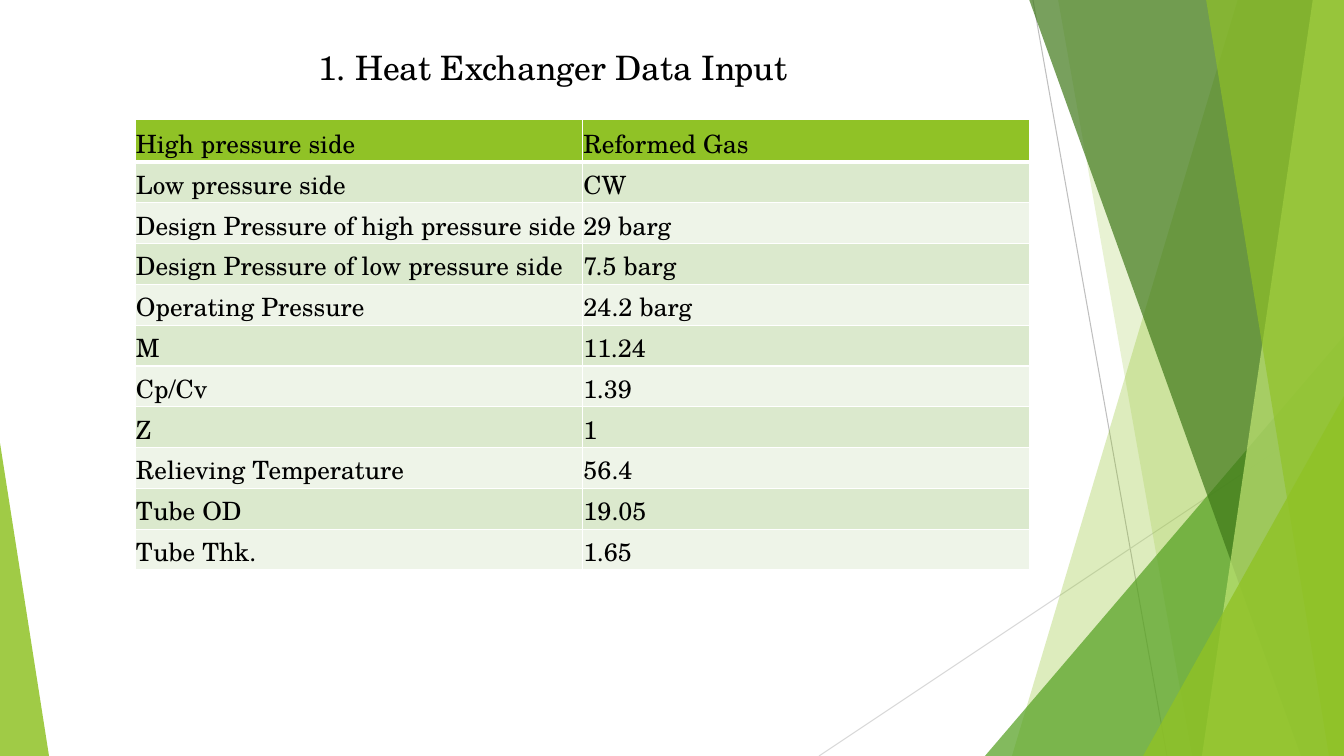
import pptx
import pptx.dml.color
import pptx.enum.shapes
import pptx.enum.text
import pptx.oxml
import pptx.oxml.ns
import pptx.util
from lxml import etree

TITLE = "1. Heat Exchanger Data Input"
ROWS = [
    ("High pressure side", "Reformed Gas"),
    ("Low pressure side", "CW"),
    ("Design Pressure of high pressure side", "29 barg"),
    ("Design Pressure of low pressure side", "7.5 barg"),
    ("Operating Pressure", "24.2 barg"),
    ("M", "11.24"),
    ("Cp/Cv", "1.39"),
    ("Z", "1"),
    ("Relieving Temperature", "56.4"),
    ("Tube OD", "19.05"),
    ("Tube Thk.", "1.65"),
]

THEME = {
    "font": "TeX Gyre Schola",
    "title_size": 24,
    "table_size": 18,
    "text": "000000",
    "header": "90C226",
    "bands": ("DBE9CD", "EEF4E8"),
    "border": "FFFFFF",
    "border_width": 1,
    "header_rule": 3,
    "lime": "90C226",
    "green": "54A021",
    "dark": "3F7819",
    "pale": "C0E474",
    "steep_line": "BFBFBF",
    "shallow_line": "D9D9D9",
    "line_width": 0.75,
}

WIDTH, HEIGHT = 1344, 756
TITLE_BOX = (303, 43, 500, 48)
TABLE_LEFT, TABLE_TOP, TABLE_WIDTH = 135, 119, 895
HEADER_HEIGHT, BODY_HEIGHT = 43, 408

LINES = [
    ((1033, 0), (1167, HEIGHT), "steep_line"),
    ((WIDTH, 406), (819, HEIGHT), "shallow_line"),
]
# Each band runs from the top edge to the bottom edge and reaches the right side.
BANDS_AND_TRIANGLES = [
    ("band", 1238, 1012, "lime", 30),
    ("band", 1058, 1192, "lime", 20),
    ("triangle", (985, 336, 359, 420), 1, "green", 72),
    ("band", 1029, 1301, "dark", 70),
    ("band", 1313, 1202, "pale", 70),
    ("band", 1206, 1329, "lime", 65),
    ("triangle", (1143, 396, 201, 360), 1, "lime", 80),
    ("triangle", (0, 443, 49, 313), 0, "lime", 85),
]


def px(length):
    return pptx.util.Emu(round(length * 914400 / 100.8))


def color(name):
    return pptx.dml.color.RGBColor.from_string(THEME.get(name, name))


def style_text(paragraph, size):
    paragraph.font.name = THEME["font"]
    paragraph.font.size = pptx.util.Pt(size)
    paragraph.font.color.rgb = color("text")


def add_line(slide, start, end, color_name):
    connector = slide.shapes.add_connector(
        pptx.enum.shapes.MSO_CONNECTOR.STRAIGHT, *map(px, start + end))
    connector.line.color.rgb = color(color_name)
    connector.line.width = pptx.util.Pt(THEME["line_width"])
    properties = connector._element.spPr
    etree.SubElement(properties, pptx.oxml.ns.qn("a:effectLst"))


def add_band(slide, top_x, bottom_x):
    builder = slide.shapes.build_freeform(px(top_x), px(-1))
    corners = [(WIDTH, -1), (WIDTH, HEIGHT), (bottom_x, HEIGHT)]
    builder.add_line_segments([(px(x), px(y)) for x, y in corners], close=True)
    return builder.convert_to_shape()


def add_triangle(slide, box, apex):
    shape = slide.shapes.add_shape(
        pptx.enum.shapes.MSO_SHAPE.ISOSCELES_TRIANGLE, *map(px, box))
    shape.adjustments[0] = apex
    return shape


def paint(shape, color_name, opacity):
    shape.shadow.inherit = False
    shape.line.fill.background()
    shape.fill.solid()
    shape.fill.fore_color.rgb = color(color_name)
    fill_color = shape._element.spPr.find(".//" + pptx.oxml.ns.qn("a:srgbClr"))
    alpha = etree.SubElement(fill_color, pptx.oxml.ns.qn("a:alpha"))
    alpha.set("val", str(opacity * 1000))


def add_decoration(slide):
    for line in LINES:
        add_line(slide, *line)
    builders = {"band": add_band, "triangle": add_triangle}
    for kind, first, second, color_name, opacity in BANDS_AND_TRIANGLES:
        paint(builders[kind](slide, first, second), color_name, opacity)


def add_title(slide):
    frame = slide.shapes.add_textbox(*map(px, TITLE_BOX)).text_frame
    frame.word_wrap = True
    frame.vertical_anchor = pptx.enum.text.MSO_ANCHOR.MIDDLE
    paragraph = frame.paragraphs[0]
    paragraph.text = TITLE
    paragraph.alignment = pptx.enum.text.PP_ALIGN.CENTER
    style_text(paragraph, THEME["title_size"])


def add_borders(cell, row_index):
    properties = cell._tc.get_or_add_tcPr()
    thick_sides = {0: "B", 1: "T"}
    for side in "LRTB":
        thick = thick_sides.get(row_index) == side
        width = THEME["header_rule"] if thick else THEME["border_width"]
        border = etree.SubElement(properties, pptx.oxml.ns.qn("a:ln" + side))
        border.set("w", str(pptx.util.Pt(width)))
        fill = etree.SubElement(border, pptx.oxml.ns.qn("a:solidFill"))
        shade = etree.SubElement(fill, pptx.oxml.ns.qn("a:srgbClr"))
        shade.set("val", THEME["border"])


def add_data_table(slide):
    table = slide.shapes.add_table(
        len(ROWS), len(ROWS[0]), px(TABLE_LEFT), px(TABLE_TOP),
        px(TABLE_WIDTH), px(HEADER_HEIGHT + BODY_HEIGHT)).table
    table.horz_banding = False
    for row_index, values in enumerate(ROWS):
        body_row = px(BODY_HEIGHT / (len(ROWS) - 1))
        table.rows[row_index].height = body_row if row_index else px(HEADER_HEIGHT)
        shade = THEME["bands"][(row_index - 1) % 2] if row_index else "header"
        for column_index, value in enumerate(values):
            cell = table.cell(row_index, column_index)
            add_borders(cell, row_index)
            cell.fill.solid()
            cell.fill.fore_color.rgb = color(shade)
            cell.margin_left = cell.margin_right = cell.margin_top = px(1)
            cell.margin_bottom = 0
            cell.vertical_anchor = pptx.enum.text.MSO_ANCHOR.BOTTOM
            paragraph = cell.text_frame.paragraphs[0]
            paragraph.text = value
            style_text(paragraph, THEME["table_size"])
            paragraph.font.bold = False


def main():
    presentation = pptx.Presentation()
    presentation.slide_width = px(WIDTH)
    presentation.slide_height = px(HEIGHT)
    slide = presentation.slides.add_slide(presentation.slide_layouts[6])
    add_decoration(slide)
    add_title(slide)
    add_data_table(slide)
    presentation.save("out.pptx")


if __name__ == "__main__":
    main()
